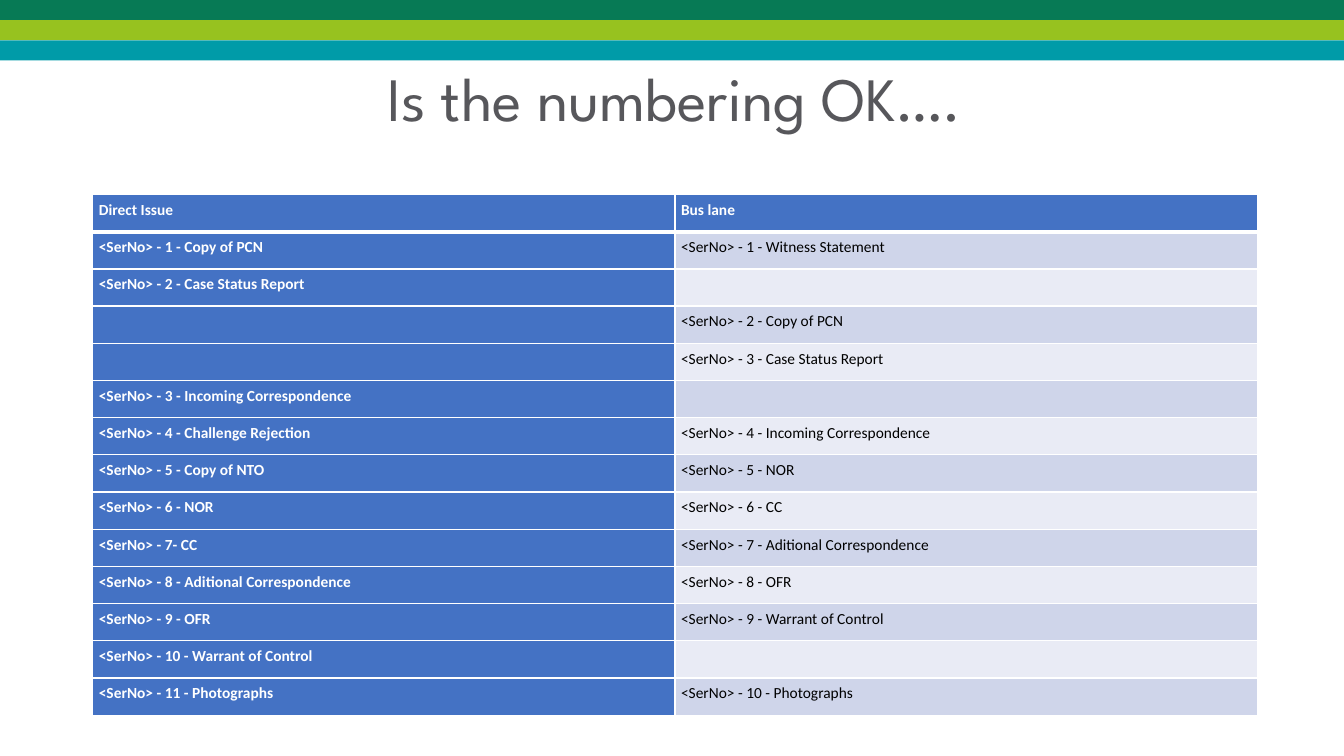
from dataclasses import dataclass

import lxml.etree
import pptx
import pptx.dml.color
import pptx.enum.shapes
import pptx.enum.text
import pptx.oxml.ns
import pptx.util

Inches = pptx.util.Inches
qn = pptx.oxml.ns.qn


@dataclass(frozen=True)
class Theme:
    stripes: tuple = ("077A55", "97C21F", "009BA8")
    title: str = "57575B"
    accent: str = "4472C4"
    bands: tuple = ("CFD5EA", "E9EBF5")
    light: str = "FFFFFF"
    dark: str = "000000"
    title_font: str = "League Spartan"
    body_font: str = "Calibri"
    title_size: int = 44
    body_size: int = 11


THEME = Theme()

ROWS = [
    ("Direct Issue", "Bus lane"),
    ("<SerNo> - 1 - Copy of PCN", "<SerNo> - 1 - Witness Statement"),
    ("<SerNo> - 2 - Case Status Report", ""),
    ("", "<SerNo> - 2 - Copy of PCN"),
    ("", "<SerNo> - 3 - Case Status Report"),
    ("<SerNo> - 3 - Incoming Correspondence", ""),
    ("<SerNo> - 4 - Challenge Rejection", "<SerNo> - 4 - Incoming Correspondence"),
    ("<SerNo> - 5 - Copy of NTO", "<SerNo> - 5 - NOR"),
    ("<SerNo> - 6 - NOR", "<SerNo> - 6 - CC"),
    ("<SerNo> - 7- CC", "<SerNo> - 7 - Aditional Correspondence"),
    ("<SerNo> - 8 - Aditional Correspondence", "<SerNo> - 8 - OFR"),
    ("<SerNo> - 9 - OFR", "<SerNo> - 9 - Warrant of Control"),
    ("<SerNo> - 10 - Warrant of Control", ""),
    ("<SerNo> - 11 - Photographs", "<SerNo> - 10 - Photographs"),
]


def rgb(value):
    return pptx.dml.color.RGBColor.from_string(value)


def style_font(font, name, size, color, bold=False):
    font.name = name
    font.size = pptx.util.Pt(size)
    font.color.rgb = rgb(color)
    font.bold = bold


def add_stripes(s, left, top, width, height):
    step = height / len(THEME.stripes)
    for i, color in enumerate(THEME.stripes):
        sp = s.shapes.add_shape(
            pptx.enum.shapes.MSO_SHAPE.RECTANGLE,
            Inches(left), Inches(top + i * step), Inches(width), Inches(step))
        sp.shadow.inherit = False
        sp.fill.solid()
        sp.fill.fore_color.rgb = rgb(color)
        sp.line.fill.background()


def add_title(s, text, left, top, width, height):
    sp = s.shapes.add_textbox(Inches(left), Inches(top), Inches(width), Inches(height))
    tf = sp.text_frame
    tf.word_wrap = True
    tf.vertical_anchor = pptx.enum.text.MSO_ANCHOR.MIDDLE
    tf.text = text
    p = tf.paragraphs[0]
    p.alignment = pptx.enum.text.PP_ALIGN.CENTER
    p.line_spacing = 0.9
    style_font(p.runs[0].font, THEME.title_font, THEME.title_size, THEME.title)


def set_borders(cell, widths):
    tcPr = cell._tc.get_or_add_tcPr()
    for i, (side, width) in enumerate(widths.items()):
        ln = lxml.etree.Element(qn(f"a:ln{side}"), w=str(pptx.util.Pt(width)))
        fill = lxml.etree.SubElement(ln, qn("a:solidFill"))
        lxml.etree.SubElement(fill, qn("a:srgbClr"), val=THEME.light)
        tcPr.insert(i, ln)


def fill_cell(cell, text, row, col):
    strong = row == 0 or col == 0
    cell.margin_left = cell.margin_right = Inches(0.06)
    cell.margin_top = cell.margin_bottom = Inches(0.06)
    cell.fill.solid()
    cell.fill.fore_color.rgb = rgb(THEME.accent if strong else THEME.bands[(row - 1) % 2])
    set_borders(cell, {"L": 1, "R": 1, "T": 3 if row == 1 else 1, "B": 3 if row == 0 else 1})
    cell.text_frame.text = text
    p = cell.text_frame.paragraphs[0]
    for r in p.runs:
        style_font(r.font, THEME.body_font, THEME.body_size,
                   THEME.light if strong else THEME.dark, strong)
    if not text:
        lxml.etree.SubElement(p._p, qn("a:endParaRPr"), sz=str(THEME.body_size * 100))


def add_numbering_table(s, rows, left, top, width, height):
    table = s.shapes.add_table(
        len(rows), len(rows[0]),
        Inches(left), Inches(top), Inches(width), Inches(height)).table
    for i, values in enumerate(rows):
        table.rows[i].height = Inches(height / len(rows))
        for j, text in enumerate(values):
            fill_cell(table.cell(i, j), text, i, j)


def main():
    prs = pptx.Presentation()
    prs.slide_width, prs.slide_height = Inches(13.33), Inches(7.5)
    s = prs.slides.add_slide(prs.slide_layouts[6])
    add_stripes(s, 0, 0, 13.33, 0.6)
    add_title(s, "Is the numbering OK….", 0.92, 0.4, 11.55, 1.21)
    add_numbering_table(s, ROWS, 0.92, 1.93, 11.55, 5.17)
    prs.save("out.pptx")


if __name__ == "__main__":
    main()
